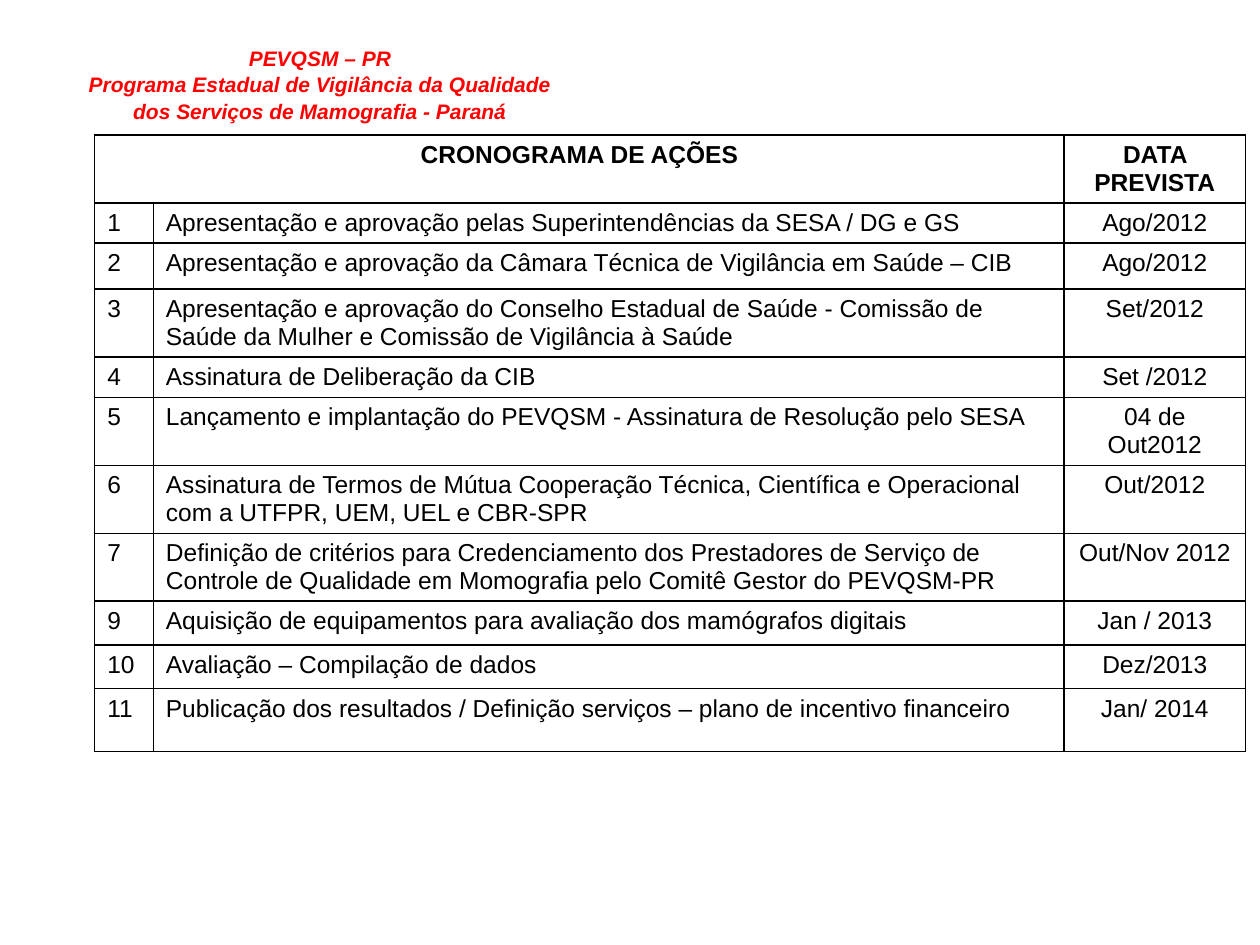
from pptx import Presentation
from pptx.dml.color import RGBColor
from pptx.enum.text import MSO_ANCHOR, MSO_AUTO_SIZE, PP_ALIGN
from pptx.oxml import parse_xml
from pptx.oxml.ns import nsdecls
from pptx.util import Cm, Pt

BLACK = RGBColor(0, 0, 0)
RED = RGBColor(255, 0, 0)

HEADING = ("PEVQSM – PR\vPrograma Estadual de Vigilância da Qualidade\v"
           "dos Serviços de Mamografia - Paraná")

COLUMN_WIDTHS = (1.18, 18.36, 3.66)
ONE_LINE, TWO_LINES = 0.81, 1.37

# Row height in cm, number, action, planned date
SCHEDULE = [
    (ONE_LINE, "1", "Apresentação e aprovação pelas Superintendências da SESA / DG e GS",
     "Ago/2012"),
    (0.93, "2", "Apresentação e aprovação da Câmara Técnica de Vigilância em Saúde – CIB",
     "Ago/2012"),
    (TWO_LINES, "3", "Apresentação e aprovação do Conselho Estadual de Saúde - Comissão de "
     "Saúde da Mulher e Comissão de Vigilância à Saúde", "Set/2012"),
    (ONE_LINE, "4", "Assinatura de Deliberação da CIB", "Set /2012"),
    (TWO_LINES, "5", "Lançamento e implantação do PEVQSM - Assinatura de Resolução pelo SESA",
     "04 de Out2012"),
    (TWO_LINES, "6", "Assinatura de Termos de Mútua Cooperação Técnica, Científica e "
     "Operacional com a UTFPR, UEM, UEL e CBR-SPR", "Out/2012"),
    (TWO_LINES, "7", "Definição de critérios para Credenciamento dos Prestadores de Serviço de "
     "Controle de Qualidade em Momografia pelo Comitê Gestor do PEVQSM-PR", "Out/Nov 2012"),
    (0.88, "9", "Aquisição de equipamentos para avaliação dos mamógrafos digitais",
     "Jan / 2013"),
    (0.88, "10", "Avaliação – Compilação de dados", "Dez/2013"),
    (1.27, "11", "Publicação dos resultados / Definição serviços – plano de incentivo financeiro",
     "Jan/ 2014"),
]


class SlideBuilder:
    """Holds the text style and the current slide."""

    font_name = "Arial"

    def __init__(self, slide):
        self.s = slide

    def format(self, p, size, color, bold=False, italic=False, align=PP_ALIGN.LEFT):
        p.alignment = align
        f = p.font
        f.name, f.size, f.bold, f.italic = self.font_name, Pt(size), bold, italic
        f.color.rgb = color

    def title(self, text, left, top, width, height):
        sp = self.s.shapes.title
        sp.left, sp.top, sp.width, sp.height = Cm(left), Cm(top), Cm(width), Cm(height)
        tf = sp.text_frame
        tf.auto_size = MSO_AUTO_SIZE.NONE
        tf.vertical_anchor = MSO_ANCHOR.MIDDLE
        p = tf.paragraphs[0]
        p.text = text
        p.line_spacing = 1.06
        self.format(p, 12, RED, bold=True, italic=True, align=PP_ALIGN.CENTER)

    def table(self, left, top, widths, heights):
        frame = self.s.shapes.add_table(len(heights), len(widths), Cm(left), Cm(top),
                                        Cm(sum(widths)), Cm(sum(heights)))
        table = frame.table
        table.first_row = table.horz_banding = False
        for column, width in zip(table.columns, widths):
            column.width = Cm(width)
        for row, height in zip(table.rows, heights):
            row.height = Cm(height)
        for cell in table.iter_cells():
            cell.fill.background()
            self.borders(cell)
        return table

    def borders(self, cell):
        tcPr = cell._tc.get_or_add_tcPr()
        for i, side in enumerate(("lnL", "lnR", "lnT", "lnB")):
            tcPr.insert(i, parse_xml(
                f'<a:{side} {nsdecls("a")} w="{Pt(1)}"><a:solidFill>'
                f'<a:srgbClr val="{BLACK}"/></a:solidFill></a:{side}>'))

    def cell(self, cell, text, bold=False, align=PP_ALIGN.LEFT):
        p = cell.text_frame.paragraphs[0]
        p.text = text
        self.format(p, 14, BLACK, bold=bold, align=align)


def main():
    prs = Presentation()
    prs.slide_width, prs.slide_height = Cm(25.4), Cm(19.05)
    builder = SlideBuilder(prs.slides.add_slide(prs.slide_layouts[5]))

    # Programme name
    builder.title(HEADING, 0, 0.53, 12.9, 2.31)

    # Schedule header
    heights = [TWO_LINES] + [row[0] for row in SCHEDULE]
    table = builder.table(1.91, 2.72, COLUMN_WIDTHS, heights)
    table.cell(0, 0).merge(table.cell(0, 1))
    for col, text in ((0, "CRONOGRAMA DE AÇÕES"), (2, "DATA PREVISTA")):
        builder.cell(table.cell(0, col), text, bold=True, align=PP_ALIGN.CENTER)

    # Schedule rows
    aligns = (PP_ALIGN.LEFT, PP_ALIGN.LEFT, PP_ALIGN.CENTER)
    for i, (_, *texts) in enumerate(SCHEDULE, start=1):
        for col, (text, align) in enumerate(zip(texts, aligns)):
            builder.cell(table.cell(i, col), text, align=align)

    prs.save("out.pptx")


if __name__ == "__main__":
    main()
